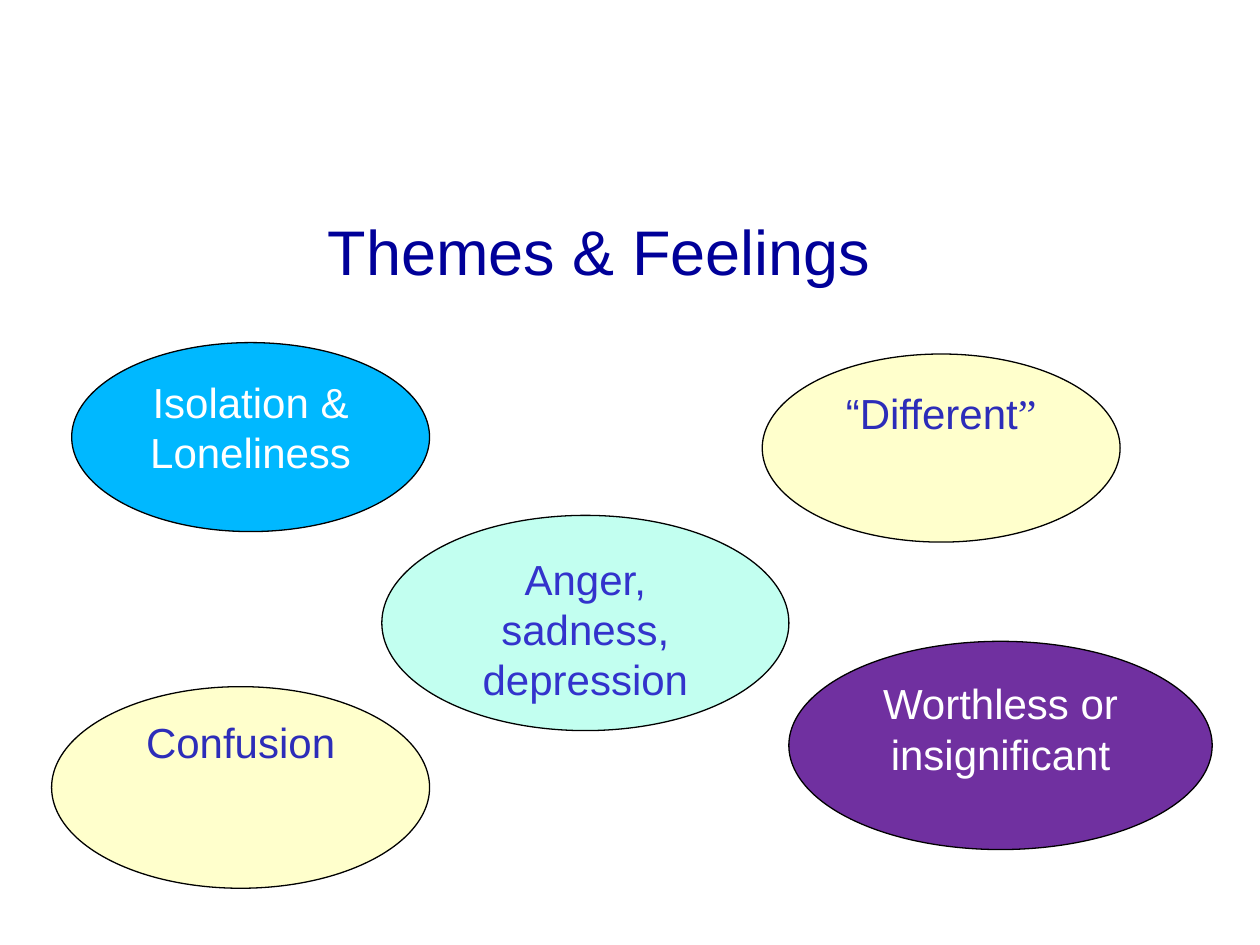
from lxml import etree
from pptx import Presentation
from pptx import util as u
from pptx.dml.color import RGBColor
from pptx.enum import shapes, text
from pptx.oxml.ns import qn

BLACK = RGBColor(0x00, 0x00, 0x00)
WHITE = RGBColor(0xFF, 0xFF, 0xFF)
NAVY = RGBColor(0x00, 0x00, 0x99)
INDIGO = RGBColor(0x2D, 0x2D, 0xB9)
BLUE = RGBColor(0x33, 0x33, 0xCC)
SKY = RGBColor(0x00, 0xB8, 0xFF)
CREAM = RGBColor(0xFF, 0xFF, 0xCC)
MINT = RGBColor(0xC2, 0xFF, 0xF0)
PURPLE = RGBColor(0x70, 0x30, 0xA0)

# Box in points, fill, text colour, runs as (wording, font)
FEELINGS = [
    ((41, 195.8, 204.5, 108), SKY, WHITE, [("Isolation & Loneliness", "Arial")]),
    ((435.6, 202.3, 204.5, 107.5), CREAM, INDIGO,
     [("“Different", "Arial"), ("”", "Times New Roman")]),
    ((218.2, 294.5, 232.6, 123), MINT, BLUE, [("Anger, sadness, depression", "Arial")]),
    ((450.8, 366.5, 241.9, 119), PURPLE, WHITE, [("Worthless or insignificant", "Arial")]),
]


def place(shape, box):
    shape.left, shape.top, shape.width, shape.height = (u.Pt(length) for length in box)


def write(shape, runs, size, color, anchor):
    frame = shape.text_frame
    frame.word_wrap = True
    frame.auto_size = text.MSO_AUTO_SIZE.NONE
    frame.vertical_anchor = anchor
    paragraph = frame.paragraphs[0]
    paragraph.alignment = text.PP_ALIGN.CENTER
    paragraph.space_before = u.Pt(0)
    for wording, font in runs:
        run = paragraph.add_run()
        run.text = wording
        run.font.name = font
        run.font.size = u.Pt(size)
        run.font.color.rgb = color
    return paragraph


def paint(shape, fill):
    shape.fill.solid()
    shape.fill.fore_color.rgb = fill
    shape.line.color.rgb = BLACK
    shape.line.width = u.Pt(0.75)


def add_feeling(slide, box, fill, color, runs):
    shape = slide.shapes.add_shape(
        shapes.MSO_SHAPE.OVAL, *(u.Pt(length) for length in box))
    shape.shadow.inherit = False
    paint(shape, fill)
    write(shape, runs, 24, color, text.MSO_ANCHOR.TOP)


def fill_title(title):
    place(title, (67, 98.6, 550.8, 89.3))
    write(title, [("Themes & Feelings", "Arial")], 36, NAVY, text.MSO_ANCHOR.MIDDLE)


def fill_body(body):
    """Turn the body placeholder into an ellipse without a bullet."""
    place(body, (29.5, 392.4, 216, 115.2))
    geometry = etree.SubElement(body._element.spPr, qn("a:prstGeom"), prst="ellipse")
    etree.SubElement(geometry, qn("a:avLst"))
    paint(body, CREAM)
    paragraph = write(body, [("Confusion", "Arial")], 24, INDIGO, text.MSO_ANCHOR.TOP)
    paragraph.line_spacing = 0.9
    properties = paragraph._p.get_or_add_pPr()
    properties.set("marL", str(u.Pt(27)))
    properties.set("indent", str(u.Pt(-27)))
    etree.SubElement(properties, qn("a:buNone"))


def main():
    presentation = Presentation()
    presentation.slide_width, presentation.slide_height = u.Pt(720), u.Pt(540)
    slide = presentation.slides.add_slide(presentation.slide_layouts[1])
    fill_title(slide.shapes.title)
    for feeling in FEELINGS:
        add_feeling(slide, *feeling)
    fill_body(slide.placeholders[1])
    presentation.save("out.pptx")


if __name__ == "__main__":
    main()
